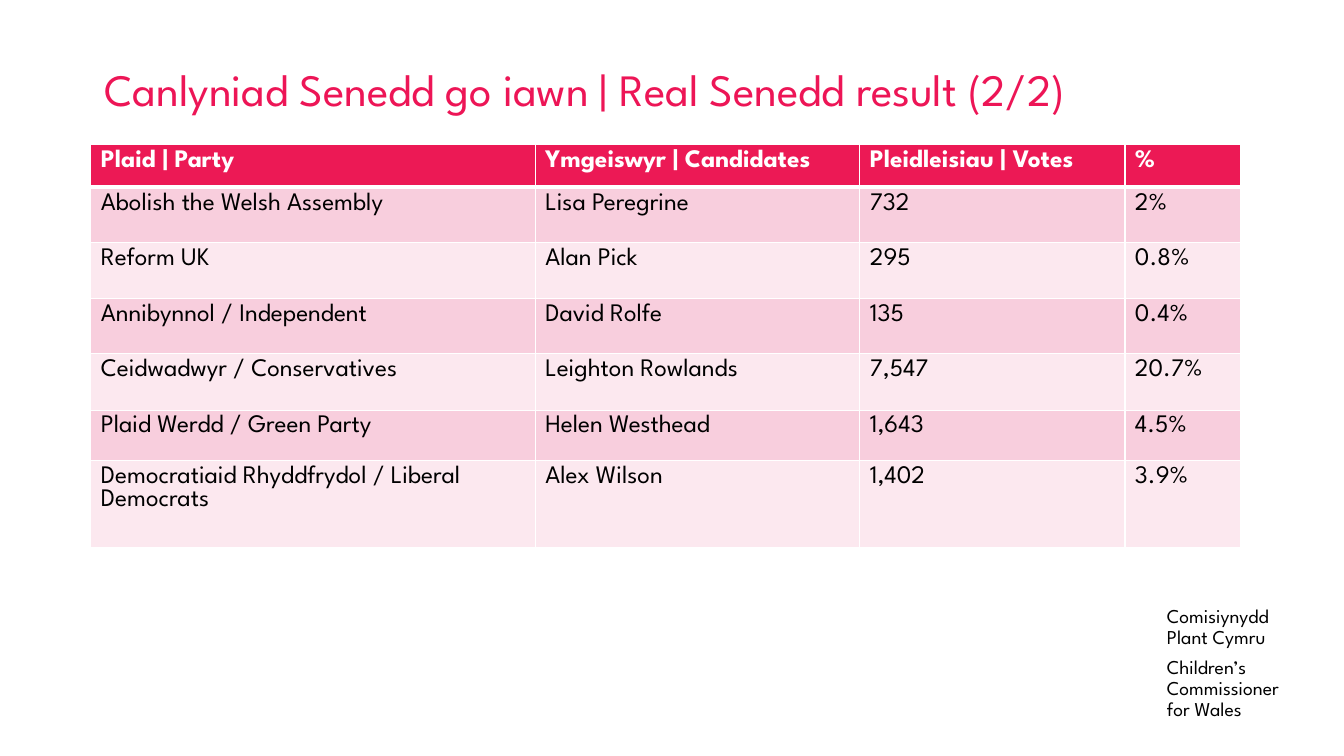
from copy import deepcopy

from lxml import etree
from pptx import Presentation
from pptx.dml import color
from pptx.enum import text
from pptx.oxml import ns
from pptx.util import Cm, Pt

FONT = "League Spartan"
PINK, TITLE, WHITE, BLACK = "EC1955", "ED1556", "FFFFFF", "000000"
BANDS = "F8CEDD", "FCE8EF"
WIDTHS = 11.2, 8.18, 6.68, 2.92
HEIGHTS = 1.08, 1.4, 1.4, 1.4, 1.42, 1.27, 2.18
ROWS = [
    ("Plaid | Party", "Ymgeiswyr | Candidates", "Pleidleisiau | Votes", "%"),
    ("Abolish the Welsh Assembly", "Lisa Peregrine", "732", "2%"),
    ("Reform UK", "Alan Pick", "295", "0.8%"),
    ("Annibynnol / Independent", "David Rolfe", "135", "0.4%"),
    ("Ceidwadwyr / Conservatives", "Leighton Rowlands", "7,547", "20.7%"),
    ("Plaid Werdd / Green Party", "Helen Westhead", "1,643", "4.5%"),
    ("Democratiaid Rhyddfrydol / Liberal Democrats", "Alex Wilson",
     "1,402", "3.9%"),
]
OFFICE = ("Comisiynydd\vPlant Cymru", "Children’s\vCommissioner\vfor Wales")


def rgb(code):
    return color.RGBColor.from_string(code)


def write(frame, *lines, size=18, ink=BLACK, bold=False, lead=None, gap=0):
    """Fill a text frame, one paragraph a line; gap is the space between."""
    for i, line in enumerate(lines):
        para = frame.add_paragraph() if i else frame.paragraphs[0]
        para.text = line
        para.alignment = text.PP_ALIGN.LEFT
        para.line_spacing = lead
        para.space_after = Pt(gap if i < len(lines) - 1 else 0)
        for run in para.runs:
            font = run.font
            font.name, font.size, font.bold = FONT, Pt(size), bold
            font.color.rgb = rgb(ink)
        # A line break takes the format of the text around it
        for br in para._p.findall(ns.qn("a:br")):
            br.append(deepcopy(para.runs[0]._r.rPr))


def place(shape, left, top, width, height):
    shape.left, shape.top = Cm(left), Cm(top)
    shape.width, shape.height = Cm(width), Cm(height)


def trim(frame, anchor):
    frame.word_wrap = True
    frame.auto_size = text.MSO_AUTO_SIZE.NONE
    frame.vertical_anchor = anchor
    frame.margin_left = frame.margin_right = 0
    frame.margin_top = frame.margin_bottom = 0


def edge(cell, side, width):
    props = cell._tc.get_or_add_tcPr()
    line = etree.SubElement(props, ns.qn(f"a:ln{side}"), w=str(Pt(width)))
    fill = etree.SubElement(line, ns.qn("a:solidFill"))
    etree.SubElement(fill, ns.qn("a:srgbClr"), val=WHITE)


def grid(slide):
    table = slide.shapes.add_table(
        len(ROWS), len(WIDTHS), Cm(2.29), Cm(3.64),
        Cm(sum(WIDTHS)), Cm(sum(HEIGHTS))).table
    for col, width in zip(table.columns, WIDTHS):
        col.width = Cm(width)
    for r, (row, height) in enumerate(zip(ROWS, HEIGHTS)):
        table.rows[r].height = Cm(height)
        head = r == 0
        for c, words in enumerate(row):
            cell = table.cell(r, c)
            write(cell.text_frame, words, bold=head,
                  ink=WHITE if head else BLACK)
            for side in "LRTB":
                thick = (head and side == "B") or (r == 1 and side == "T")
                edge(cell, side, 3 if thick else 1)
            cell.fill.solid()
            cell.fill.fore_color.rgb = rgb(PINK if head else BANDS[(r - 1) % 2])


def main():
    deck = Presentation()
    deck.slide_width, deck.slide_height = Cm(33.87), Cm(19.05)
    slide = deck.slides.add_slide(deck.slide_layouts[5])

    title = slide.shapes.title
    place(title, 2.64, 1.7, 28.63, 1.22)
    trim(title.text_frame, text.MSO_ANCHOR.BOTTOM)
    write(title.text_frame, "Canlyniad Senedd go iawn | Real Senedd result (2/2)",
          size=32, ink=TITLE, lead=0.9)

    grid(slide)

    office = slide.shapes.add_textbox(0, 0, 0, 0)
    place(office, 29.41, 15.27, 3.51, 2.92)
    trim(office.text_frame, text.MSO_ANCHOR.MIDDLE)
    write(office.text_frame, *OFFICE, size=14, lead=0.9, gap=6)

    deck.save("out.pptx")


if __name__ == "__main__":
    main()
